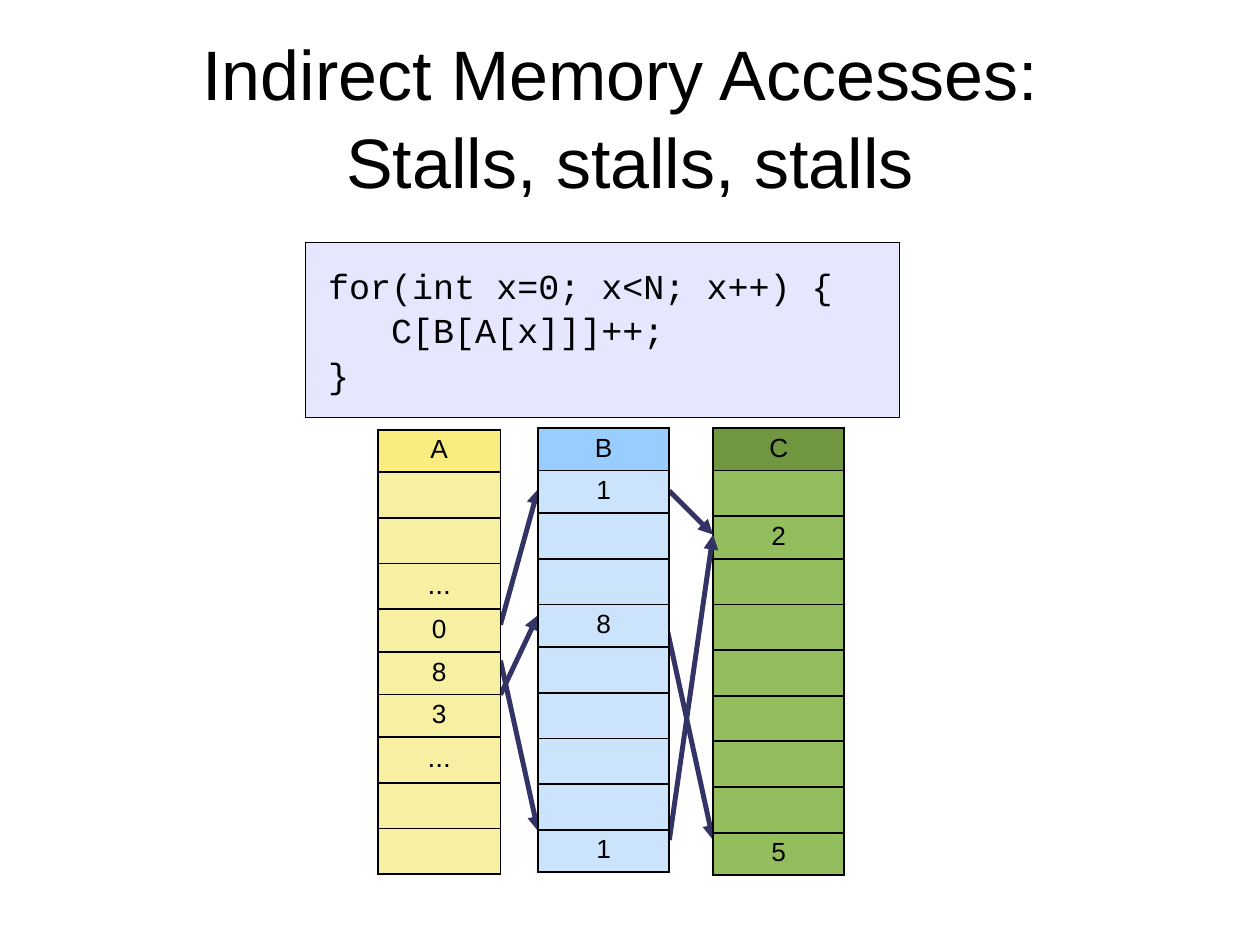
from dataclasses import dataclass

from lxml.etree import SubElement as Sub
from pptx import Presentation as Deck
from pptx.dml.color import RGBColor as Rgb
from pptx.enum.shapes import MSO_CONNECTOR as Link, MSO_SHAPE as Form
from pptx.enum.text import MSO_ANCHOR as Anchor, PP_ALIGN as Align
from pptx.oxml.ns import qn
from pptx.util import Pt


@dataclass(frozen=True)
class Theme:
    ink: str = "000000"
    arrow: str = "333366"
    panel: str = "E6E6FF"
    sans: str = "Arial"
    mono: str = "Courier New"
    title: float = 40
    code: float = 20
    cell: float = 15
    dots: float = 16
    edge: float = 1.13
    stroke: float = 2.83


@dataclass(frozen=True)
class Array:
    left: float
    top: float
    width: float
    head: str
    body: str
    cells: tuple[str, ...]


@dataclass(frozen=True)
class Arrow:
    x1: float
    y1: float
    x2: float
    y2: float


LOOK = Theme()
SHORT, TALL = 23.8, 26.1
A = Array(216, 245.5, 70, "F8ED7E", "F7EFA2",
          ("A", "", "", "...", "0", "8", "3", "...", "", ""))
B = Array(307.5, 244.5, 75, "99CCFF", "CBE3FB",
          ("B", "1", "", "", "8", "", "", "", "", "1"))
C = Array(407.5, 244.5, 75, "70963F", "94BD5E",
          ("C", "", "2", "", "", "", "", "", "", "5"))
UNDER = Arrow(379.5, 351.5, 407.5, 480)
ARROWS = (
    Arrow(382.5, 480, 407.5, 305.5),
    Arrow(382.5, 280.5, 407.5, 305.5),
    Arrow(286, 397, 307.5, 351.5),
    Arrow(286, 357, 307.5, 279.5),
    Arrow(286, 377.5, 307.5, 475),
)


def add_run(para, text: str, size: float, face: str) -> None:
    run = para.add_run()
    run.text = text
    run.font.size = Pt(size)
    run.font.name = face
    run.font.color.rgb = Rgb.from_string(LOOK.ink)


def add_lines(frame, lines: tuple[str, ...], size: float, face: str,
              align: Align, gap: float) -> None:
    for i, line in enumerate(lines):
        para = frame.add_paragraph() if i else frame.paragraphs[0]
        para.alignment = align
        para.space_before = Pt(gap)
        add_run(para, line, size, face)


def set_frame(frame, inset: float) -> None:
    frame.word_wrap = True
    frame.vertical_anchor = Anchor.MIDDLE
    frame.margin_left = frame.margin_right = Pt(inset)
    frame.margin_top = frame.margin_bottom = Pt(inset)


def add_edges(cell) -> None:
    props = cell._tc.get_or_add_tcPr()
    for side in ("lnL", "lnR", "lnT", "lnB"):
        edge = Sub(props, qn(f"a:{side}"), w=str(Pt(LOOK.edge)))
        Sub(Sub(edge, qn("a:solidFill")), qn("a:srgbClr"), val=LOOK.ink)


def add_array(slide, data: Array) -> None:
    sizes = [SHORT if text not in ("", "...") else TALL for text in data.cells]
    table = slide.shapes.add_table(
        len(sizes), 1, Pt(data.left), Pt(data.top),
        Pt(data.width), Pt(sum(sizes))).table
    table.first_row = table.horz_banding = False
    for i, (text, size) in enumerate(zip(data.cells, sizes)):
        table.rows[i].height = Pt(size)
        cell = table.cell(i, 0)
        cell.margin_top = cell.margin_bottom = Pt(3.2)
        add_edges(cell)
        cell.fill.solid()
        cell.fill.fore_color.rgb = Rgb.from_string(data.body if i else data.head)
        para = cell.text_frame.paragraphs[0]
        para.alignment = Align.CENTER
        if text:
            size = LOOK.dots if text == "..." else LOOK.cell
            add_run(para, text, size, LOOK.sans)
        else:
            Sub(para._p, qn("a:endParaRPr"), sz=str(int(LOOK.cell * 100)))


def add_arrow(slide, data: Arrow) -> None:
    link = slide.shapes.add_connector(
        Link.STRAIGHT, Pt(data.x1), Pt(data.y1), Pt(data.x2), Pt(data.y2))
    link.line.width = Pt(LOOK.stroke)
    link.line.color.rgb = Rgb.from_string(LOOK.arrow)
    Sub(link.line._get_or_add_ln(), qn("a:tailEnd"), type="triangle")
    Sub(link._element.spPr, qn("a:effectLst"))


def add_title(slide) -> None:
    frame = slide.shapes.add_textbox(Pt(36), Pt(21.6), Pt(648), Pt(90)).text_frame
    set_frame(frame, 0)
    add_lines(frame, ("Indirect Memory Accesses: ", "Stalls, stalls, stalls"),
              LOOK.title, LOOK.sans, Align.CENTER, 2)


def add_code(slide) -> None:
    box = slide.shapes.add_shape(
        Form.RECTANGLE, Pt(174.5), Pt(138.5), Pt(339.5), Pt(100))
    box.shadow.inherit = False
    box.fill.solid()
    box.fill.fore_color.rgb = Rgb.from_string(LOOK.panel)
    box.line.color.rgb = Rgb.from_string(LOOK.ink)
    box.line.width = Pt(0.75)
    set_frame(box.text_frame, 13)
    add_lines(box.text_frame, ("for(int x=0; x<N; x++) {", "C[B[A[x]]]++;", "}"),
              LOOK.code, LOOK.mono, Align.LEFT, 1.6)
    inner = box.text_frame.paragraphs[1]._p.get_or_add_pPr()
    inner.set("marL", str(Pt(36)))


def main() -> None:
    deck = Deck()
    deck.slide_width, deck.slide_height = Pt(720), Pt(540)
    slide = deck.slides.add_slide(deck.slide_layouts[6])
    add_title(slide)
    add_arrow(slide, UNDER)
    add_array(slide, C)
    for arrow in ARROWS:
        add_arrow(slide, arrow)
    add_code(slide)
    add_array(slide, A)
    add_array(slide, B)
    deck.save("out.pptx")


if __name__ == "__main__":
    main()
